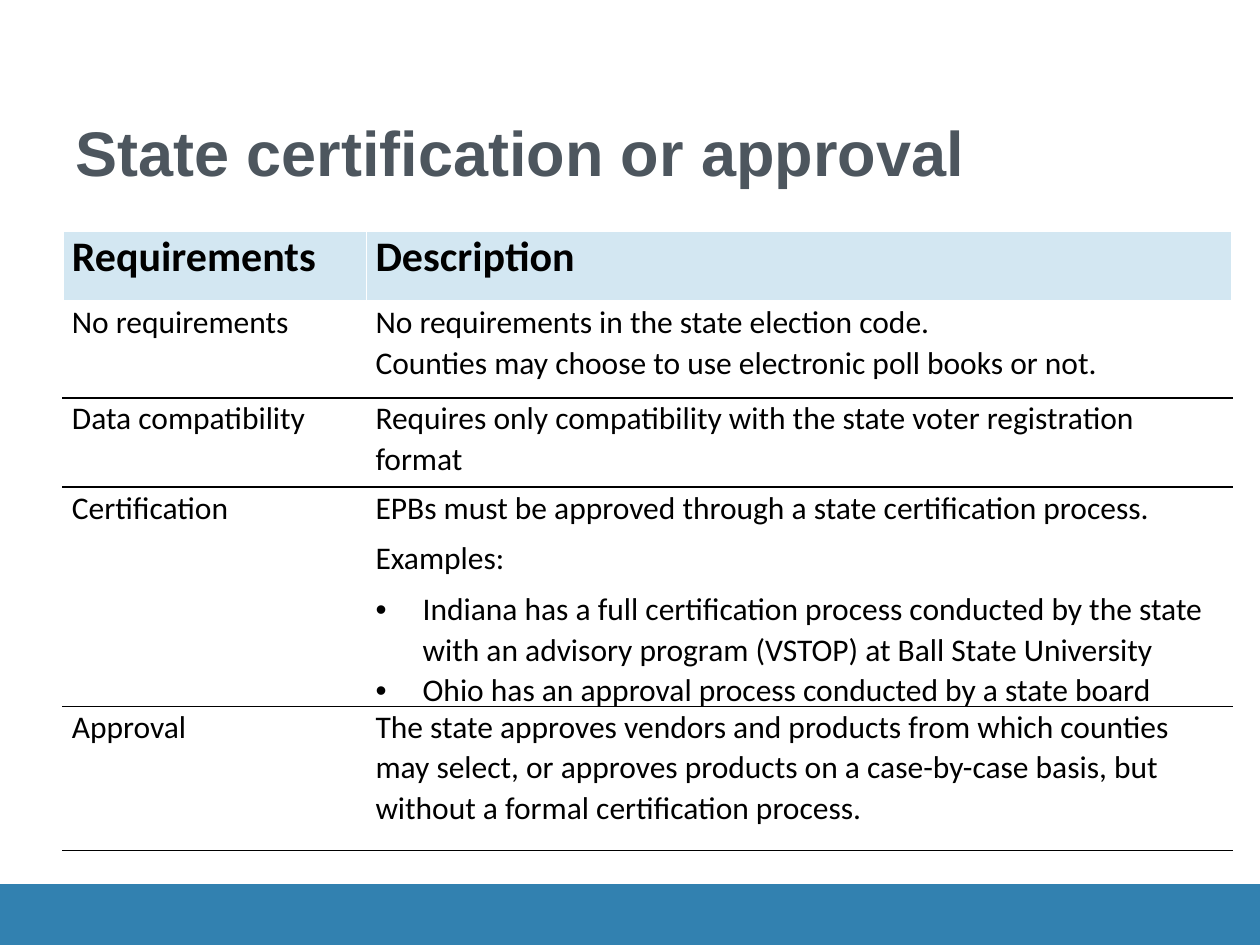
from dataclasses import dataclass

import lxml.etree
import pptx
import pptx.dml.color
import pptx.enum.shapes
import pptx.enum.text
import pptx.oxml.ns
import pptx.util

Cm = pptx.util.Cm
Pt = pptx.util.Pt
RGBColor = pptx.dml.color.RGBColor

WHITE = RGBColor(0xFF, 0xFF, 0xFF)
BLACK = RGBColor(0x00, 0x00, 0x00)
SLATE = RGBColor(0x4D, 0x56, 0x5E)
BLUE = RGBColor(0x32, 0x81, 0xB0)
PALE_BLUE = RGBColor(0xD3, 0xE7, 0xF2)

TITLE_FONT = {"name": "Arial", "size": Pt(36), "bold": True}
HEADER_FONT = {"name": "Calibri", "size": Pt(24), "bold": True}
BODY_FONT = {"name": "Calibri", "size": Pt(18), "bold": False}
CELL_MARGINS = {"margin_left": Cm(0.18), "margin_right": Cm(0.18),
                "margin_top": 0, "margin_bottom": 0}
BULLET_INDENT = Cm(0.95)


@dataclass
class Line:
    text: str
    before: float = 3
    after: float = 3
    bullet: bool = False


@dataclass
class Requirement:
    height: float
    name: str
    description: list[Line]


HEADER = Requirement(1.42, "Requirements", [Line("Description")])
REQUIREMENTS = [
    Requirement(1.93, "No requirements", [
        Line("No requirements in the state election code. \n"
             "Counties may choose to use electronic poll books or not.")]),
    Requirement(1.8, "Data compatibility", [
        Line("Requires only compatibility with the state voter registration format")]),
    Requirement(4.42, "Certification", [
        Line("EPBs must be approved through a state certification process."),
        Line("Examples:"),
        Line("Indiana has a full certification process conducted by the state "
             "with an advisory program (VSTOP) at Ball State University",
             after=0, bullet=True),
        Line("Ohio has an approval process conducted by a state board",
             before=0, bullet=True)]),
    Requirement(2.9, "Approval", [
        Line("The state approves vendors and products from which counties may "
             "select, or approves products on a case-by-case basis, but "
             "without a formal certification process.")]),
]
COLUMN_WIDTHS = [6.12, 17.45]


def set_values(target: object, values: dict) -> None:
    for name, value in values.items():
        setattr(target, name, value)


def write_text(paragraph, text: str, font: dict, color: RGBColor) -> None:
    paragraph.text = text
    for run in paragraph.runs:
        set_values(run.font, font)
        run.font.color.rgb = color


def add_bullet(paragraph) -> None:
    properties = paragraph._p.get_or_add_pPr()
    properties.set("marL", str(BULLET_INDENT))
    properties.set("indent", str(-BULLET_INDENT))
    for tag, attribute, value in (("a:buFont", "typeface", "Arial"),
                                  ("a:buChar", "char", "•")):
        lxml.etree.SubElement(properties, pptx.oxml.ns.qn(tag)).set(attribute, value)


def add_border(cell, side: str, color: RGBColor, width: float) -> None:
    qn = pptx.oxml.ns.qn
    line = lxml.etree.SubElement(cell._tc.get_or_add_tcPr(), qn(f"a:ln{side}"))
    line.set("w", str(Pt(width)))
    fill = lxml.etree.SubElement(line, qn("a:solidFill"))
    lxml.etree.SubElement(fill, qn("a:srgbClr")).set("val", str(color))


def fill_cell(cell, lines: list[Line], font: dict, spacing: float,
              background: RGBColor, top: tuple, bottom: tuple) -> None:
    set_values(cell, CELL_MARGINS)
    frame = cell.text_frame
    for index, line in enumerate(lines):
        paragraph = frame.add_paragraph() if index else frame.paragraphs[0]
        write_text(paragraph, line.text, font, BLACK)
        set_values(paragraph, {"line_spacing": spacing,
                               "space_before": Pt(line.before),
                               "space_after": Pt(line.after)})
        if line.bullet:
            add_bullet(paragraph)
    # Borders come before the fill in the cell properties
    for side, border in (("L", (WHITE, 1)), ("R", (WHITE, 1)),
                         ("T", top), ("B", bottom)):
        add_border(cell, side, *border)
    cell.fill.solid()
    cell.fill.fore_color.rgb = background


def add_footer_bar(slide) -> None:
    bar = slide.shapes.add_shape(pptx.enum.shapes.MSO_SHAPE.RECTANGLE,
                                 0, Cm(17.83), Cm(25.4), Cm(1.27))
    bar.shadow.inherit = False
    bar.fill.solid()
    bar.fill.fore_color.rgb = BLUE
    bar.line.color.rgb = BLUE
    bar.line.width = Pt(0.75)


def add_title(slide, text: str) -> None:
    box = slide.shapes.add_textbox(Cm(1.27), Cm(0.76), Cm(22.86), Cm(3.18))
    set_values(box.text_frame, {
        "word_wrap": True,
        "vertical_anchor": pptx.enum.text.MSO_ANCHOR.BOTTOM})
    write_text(box.text_frame.paragraphs[0], text, TITLE_FONT, SLATE)


def add_requirements_table(slide) -> None:
    rows = [HEADER, *REQUIREMENTS]
    table = slide.shapes.add_table(
        len(rows), len(COLUMN_WIDTHS), Cm(1.27), Cm(4.67),
        Cm(sum(COLUMN_WIDTHS)), Cm(sum(row.height for row in rows))).table
    for column, width in zip(table.columns, COLUMN_WIDTHS):
        column.width = Cm(width)
    top = (WHITE, 1)
    for index, row in enumerate(rows):
        is_header = row is HEADER
        bottom = (WHITE, 3) if is_header else (BLACK, 1)
        table.rows[index].height = Cm(row.height)
        for column, lines in enumerate(([Line(row.name)], row.description)):
            fill_cell(table.cell(index, column), lines,
                      HEADER_FONT if is_header else BODY_FONT,
                      1.0 if is_header else 1.05,
                      PALE_BLUE if is_header else WHITE, top, bottom)
        top = (WHITE, 1) if is_header else bottom


def main() -> None:
    presentation = pptx.Presentation()
    presentation.slide_width = Cm(25.4)
    presentation.slide_height = Cm(19.05)
    slide = presentation.slides.add_slide(presentation.slide_layouts[6])
    add_footer_bar(slide)
    add_title(slide, "State certification or approval")
    add_requirements_table(slide)
    presentation.save("out.pptx")


if __name__ == "__main__":
    main()
